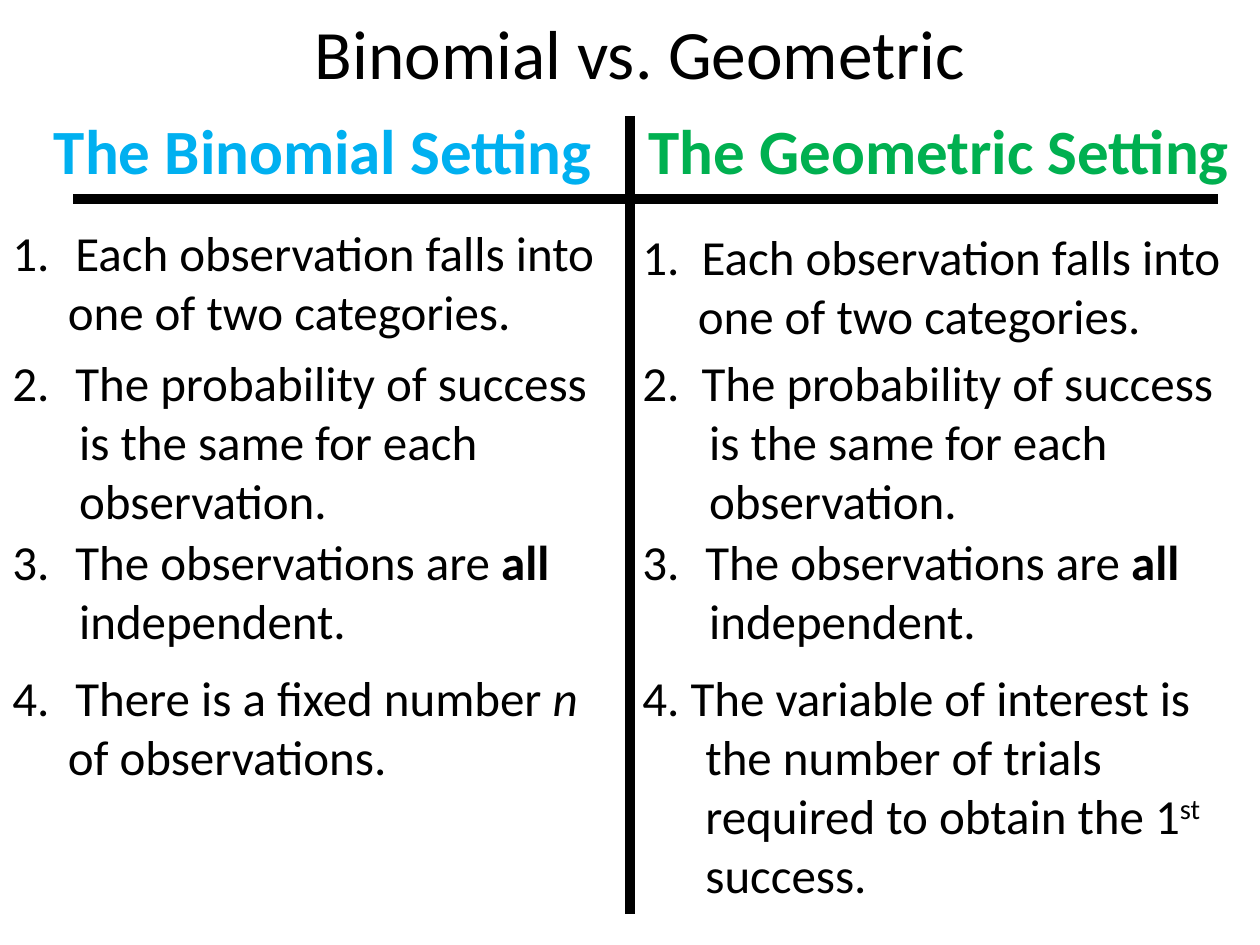
from lxml.etree import SubElement
from pptx import Presentation
from pptx.dml.color import RGBColor
from pptx.enum.shapes import MSO_CONNECTOR
from pptx.enum.text import MSO_ANCHOR, PP_ALIGN
from pptx.oxml.ns import qn
from pptx.util import Inches, Pt

BLACK = RGBColor(0x00, 0x00, 0x00)
BLUE = RGBColor(0x00, 0xB0, 0xF0)
GREEN = RGBColor(0x00, 0xB0, 0x50)

WIDTH, HEIGHT = 10, 7.5
COLUMNS = (0, WIDTH / 2)
ROWS = (1.72, 2.75, 4.17, 5.25)
ROW_HEIGHTS = (1.03, 1.5, 1.04, 1.03)
ITEM_WIDTH = 4.9
HANG = 0.5

# Run formats
BODY = {"size": Pt(28), "name": "Calibri"}
BOLD = {"bold": True}
ITALIC = {"italic": True}
HEADING = {"size": Pt(36), "name": "Calibri", "bold": True}
TITLE = {"size": Pt(39.6), "name": "Calibri"}

# Each item: indent of the further lines, then lines made of (text, format) runs
CATEGORIES = (0.44, [[("Each observation falls into", {})],
                     [("one of two categories.", {})]])
PROBABILITY = (0.53, [[("The probability of success", {})],
                      [("is the same for each", {})],
                      [("observation.", {})]])
INDEPENDENT = (0.53, [[("The observations are ", {}), ("all", BOLD)],
                      [("independent.", {})]])
FIXED_NUMBER = (0.44, [[("There is a fixed number ", {}), ("n", ITALIC)],
                       [("of observations.", {})]])
SHARED = (CATEGORIES, PROBABILITY, INDEPENDENT)


def add_box(slide, left, top, width, height):
    tf = slide.shapes.add_textbox(*map(Inches, (left, top, width, height))).text_frame
    tf.word_wrap = True
    return tf


def add_run(p, text, fmt, color=BLACK):
    r = p.add_run()
    r.text = text
    for key, value in fmt.items():
        setattr(r.font, key, value)
    r.font.color.rgb = color
    return r


def set_indent(p, margin, indent=0):
    pPr = p._p.get_or_add_pPr()
    pPr.set("marL", str(Inches(margin)))
    pPr.set("indent", str(Inches(indent)))
    return pPr


def add_label(slide, box, text, fmt, color=BLACK, align=PP_ALIGN.LEFT):
    tf = add_box(slide, *box)
    tf.vertical_anchor = MSO_ANCHOR.MIDDLE
    p = tf.paragraphs[0]
    p.alignment = align
    add_run(p, text, fmt, color)


def add_item(slide, box, number, item, hang):
    tf = add_box(slide, *box)
    rest_indent, lines = item
    for i, line in enumerate(lines):
        p = tf.add_paragraph() if i else tf.paragraphs[0]
        if i:
            set_indent(p, rest_indent)
        else:
            pPr = set_indent(p, hang, -hang)
            SubElement(pPr, qn("a:buFont"), typeface="+mj-lt")
            SubElement(pPr, qn("a:buAutoNum"), type="arabicPeriod", startAt=str(number))
        for text, fmt in line:
            add_run(p, text, {**BODY, **fmt})


def add_variable_item(slide, box):
    p = add_box(slide, *box).paragraphs[0]
    set_indent(p, HANG, -HANG)
    add_run(p, "4. The variable of interest is the number of trials "
               "required to obtain the 1", BODY)
    r = add_run(p, "st", BODY)
    r.font._element.set("baseline", "30000")
    add_run(p, " success.", BODY)


def add_rule(slide, *ends):
    line = slide.shapes.add_connector(MSO_CONNECTOR.STRAIGHT, *map(Inches, ends))
    line.line.color.rgb = BLACK
    line.line.width = Pt(6)
    SubElement(line._element.spPr, qn("a:effectLst"))


def main():
    prs = Presentation()
    prs.slide_width, prs.slide_height = Inches(WIDTH), Inches(HEIGHT)
    slide = prs.slides.add_slide(prs.slide_layouts[6])

    # Title and column headings
    add_label(slide, (0.83, 0, 8.5, 0.83), "Binomial vs. Geometric", TITLE,
              align=PP_ALIGN.CENTER)
    add_label(slide, (0.33, 0.83, 4.6, 0.71), "The Binomial Setting", HEADING, BLUE)
    add_label(slide, (5.05, 0.83, 4.95, 0.71), "The Geometric Setting", HEADING, GREEN)

    # Numbered conditions
    binomial = SHARED + (FIXED_NUMBER,)
    for left, items, hangs in ((COLUMNS[0], binomial, (HANG,) * 4),
                               (COLUMNS[1], SHARED, (0.47, 0.47, HANG))):
        cells = zip(ROWS, ROW_HEIGHTS, items, hangs)
        for number, (top, height, item, hang) in enumerate(cells, 1):
            # The first geometric condition sits slightly lower
            drop = 0.03 if left and number == 1 else 0
            add_item(slide, (left, top + drop, ITEM_WIDTH, height), number, item, hang)
    add_variable_item(slide, (COLUMNS[1], ROWS[3], 4.85, 1.99))

    # Dividing lines
    add_rule(slide, 0.58, 1.58, 9.67, 1.58)
    add_rule(slide, WIDTH / 2, 0.92, WIDTH / 2, 7.25)

    prs.save("out.pptx")


if __name__ == "__main__":
    main()
